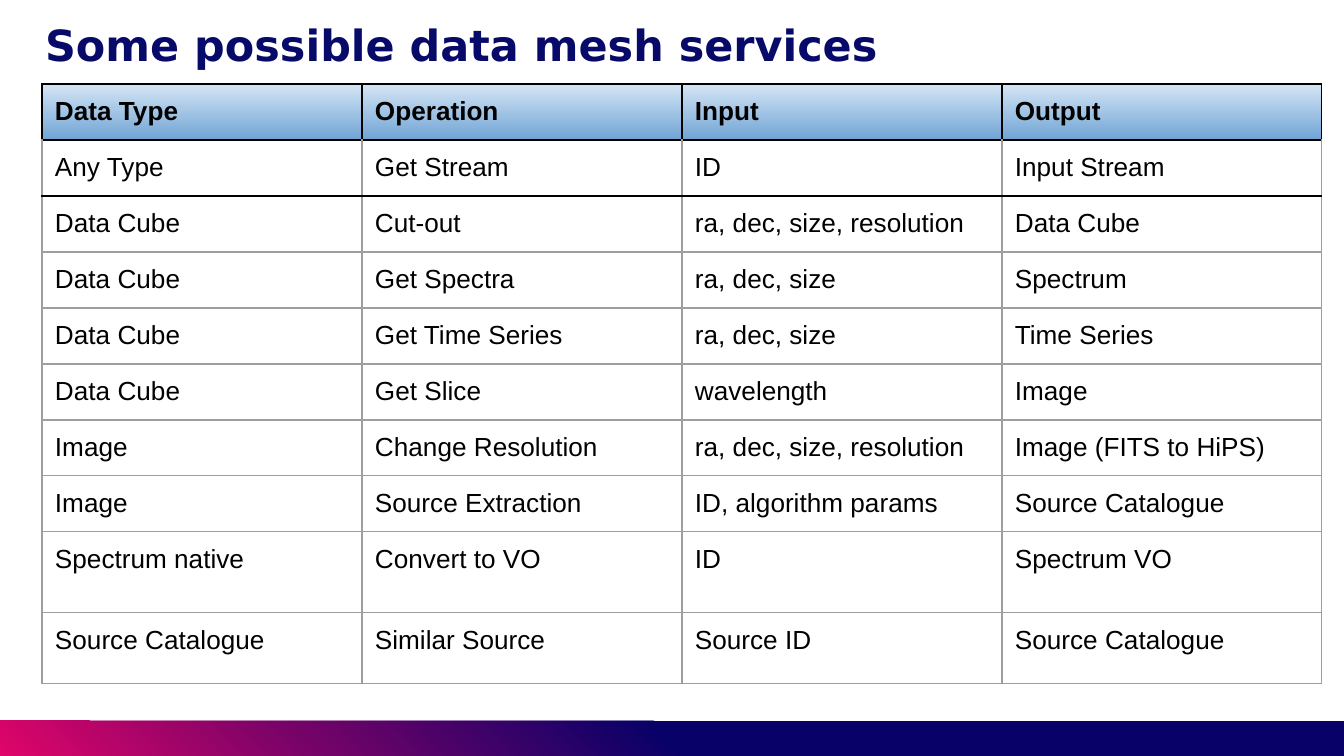
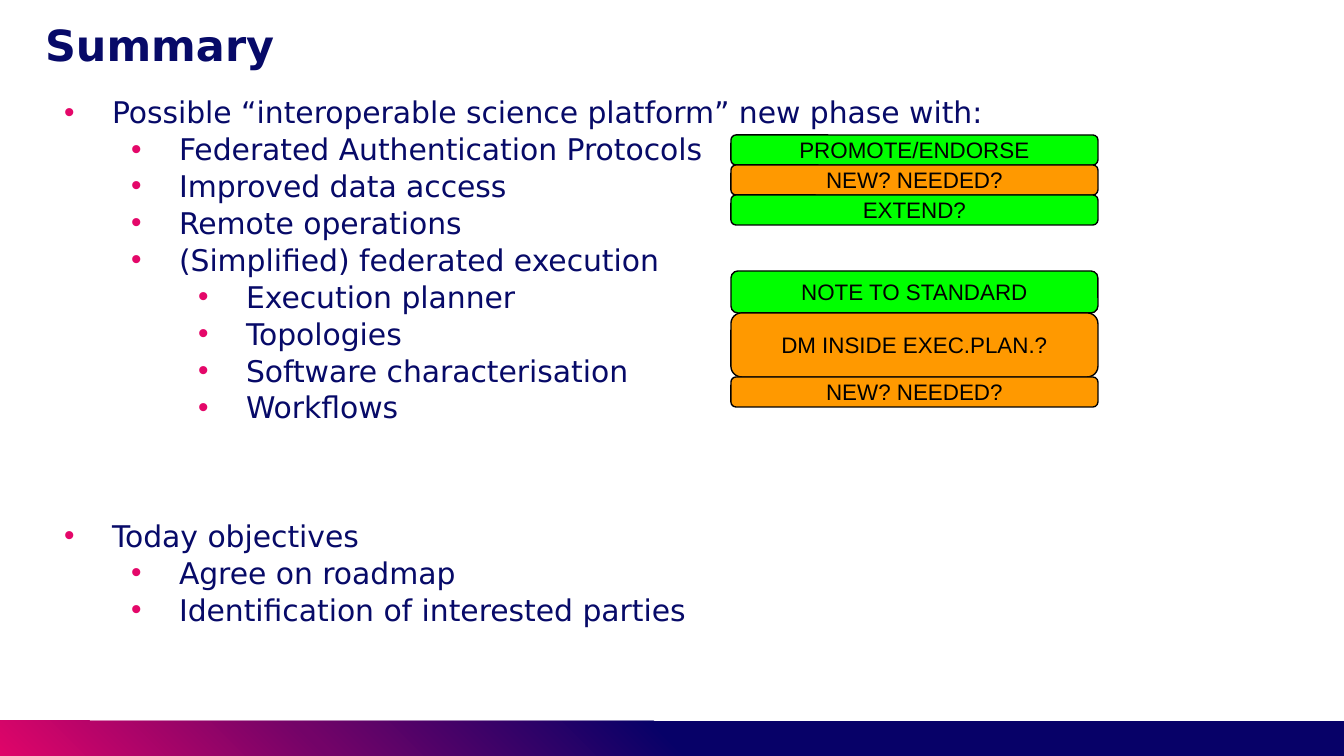
from dataclasses import dataclass

from lxml import etree
from pptx import Presentation
from pptx.dml.color import RGBColor
from pptx.enum.shapes import MSO_CONNECTOR, MSO_SHAPE
from pptx.enum.text import MSO_ANCHOR, MSO_AUTO_SIZE, PP_ALIGN
from pptx.oxml.ns import qn
from pptx.util import Pt

RECTANGLE = MSO_SHAPE.RECTANGLE
ROUNDED = MSO_SHAPE.ROUNDED_RECTANGLE
STRAIGHT = MSO_CONNECTOR.STRAIGHT
TOP, MIDDLE = MSO_ANCHOR.TOP, MSO_ANCHOR.MIDDLE
LEFT, CENTER = PP_ALIGN.LEFT, PP_ALIGN.CENTER
NO_AUTOFIT = MSO_AUTO_SIZE.NONE
TITLE_AND_CONTENT, TITLE_ONLY = 1, 5

SERVICES_TITLE = "Some possible data mesh services"
SERVICES = [
    ("Data Type", "Operation", "Input", "Output"),
    ("Any Type", "Get Stream", "ID", "Input Stream"),
    ("Data Cube", "Cut-out", "ra, dec, size, resolution", "Data Cube"),
    ("Data Cube", "Get Spectra", "ra, dec, size", "Spectrum"),
    ("Data Cube", "Get Time Series", "ra, dec, size", "Time Series"),
    ("Data Cube", "Get Slice", "wavelength", "Image"),
    ("Image", "Change Resolution", "ra, dec, size, resolution", "Image (FITS to HiPS)"),
    ("Image", "Source Extraction", "ID, algorithm params", "Source Catalogue"),
    ("Spectrum native", "Convert to VO", "ID", "Spectrum VO"),
    ("Source Catalogue", "Similar Source", "Source ID", "Source Catalogue"),
]
ROW_HEIGHTS = [56] * 8 + [81, 71]

SUMMARY_TITLE = "Summary"
SUMMARY = [
    (0, "Possible “interoperable science platform” new phase with:"),
    (1, "Federated Authentication Protocols"),
    (1, "Improved data access"),
    (1, "Remote operations"),
    (1, "(Simplified) federated execution"),
    (2, "Execution planner"),
    (2, "Topologies"),
    (2, "Software characterisation"),
    (2, "Workflows"),
    (0, "Today objectives"),
    (1, "Agree on roadmap"),
    (1, "Identification of interested parties"),
]
TAG_STACKS = [
    (135, [("PROMOTE/ENDORSE", "ready", 30),
           ("NEW? NEEDED?", "open", 30),
           ("EXTEND?", "ready", 30)]),
    (271, [("NOTE TO STANDARD", "ready", 42),
           ("DM INSIDE EXEC.PLAN.?", "open", 64),
           ("NEW? NEEDED?", "open", 30)]),
]


@dataclass(frozen=True)
class Theme:
    heading_font: str = "DejaVu Sans"
    label_font: str = "Arial"
    title_size: int = 23
    body_size: int = 16
    table_size: int = 14
    tag_size: int = 12
    thin: float = 0.75
    navy: str = "070A68"
    pink: str = "E40769"
    black: str = "000000"
    white: str = "FFFFFF"
    grid: str = "9E9E9E"
    ready: str = "00FF00"
    open: str = "FF9900"
    band: tuple = ((0, "070168"), (50, "070168"), (76, "730368"), (100, "DF0569"))
    header: tuple = ((0, "D4E5F5"), (100, "70A4D5"))


THEME = Theme()


def px(length):
    return round(length * 914400 / 134.4)


def rgb(value):
    return RGBColor.from_string(value)


def assign(target, **values):
    for name, value in values.items():
        setattr(target, name, value)


def place(shape, left, top, width, height):
    assign(shape, left=px(left), top=px(top), width=px(width), height=px(height))


def add_node(parent, tag, **attributes):
    node = etree.SubElement(parent, qn(tag))
    for name, value in attributes.items():
        node.set(name, str(value))
    return node


def add_color(parent, value):
    return add_node(add_node(parent, "a:solidFill"), "a:srgbClr", val=value)


def write(paragraph, text, font, size, color, bold=False):
    run = paragraph.add_run()
    run.text = text
    assign(run.font, name=font, size=Pt(size), bold=bold)
    run.font.color.rgb = rgb(color)


def set_frame(frame, margins, anchor):
    sides = ("margin_left", "margin_top", "margin_right", "margin_bottom")
    assign(frame, word_wrap=True, auto_size=NO_AUTOFIT, vertical_anchor=anchor,
           **dict(zip(sides, map(px, margins))))


def paint_gradient(fill, properties, stops, angle):
    fill.gradient()
    gradient = properties.find(qn("a:gradFill"))
    for child in list(gradient):
        gradient.remove(child)
    stop_list = add_node(gradient, "a:gsLst")
    for position, color in stops:
        stop = add_node(stop_list, "a:gs", pos=position * 1000)
        add_node(stop, "a:srgbClr", val=color)
    add_node(gradient, "a:lin", ang=angle * 60000, scaled=0)


def add_footer_band(presentation, slide):
    band = slide.shapes.add_shape(RECTANGLE, 0, px(721), px(1344), px(35))
    band.shadow.inherit = False
    band.line.fill.background()
    paint_gradient(band.fill, band.element.spPr, THEME.band, 135)

    rule = slide.shapes.add_connector(STRAIGHT, px(90), px(720), px(1344), px(720))
    rule.line.width = Pt(1)
    rule.line.color.rgb = rgb(THEME.white)
    color = rule.element.spPr.find(".//" + qn("a:srgbClr"))
    add_node(color, "a:alpha", val=50000)
    add_node(rule.element.spPr, "a:effectLst")

    for identifier, shape in enumerate((band, rule), start=50):
        shape.element[0][0].set("id", str(identifier))
        presentation.slide_master.shapes.element.append(shape.element)


def add_slide(presentation, layout, heading):
    slide = presentation.slides.add_slide(presentation.slide_layouts[layout])
    title = slide.shapes.title
    place(title, 42, 19, 1260, 105)
    set_frame(title.text_frame, (3, 0, 3, 3), TOP)
    paragraph = title.text_frame.paragraphs[0]
    paragraph.alignment = LEFT
    write(paragraph, heading, THEME.heading_font, THEME.title_size, THEME.navy, True)
    return slide


def set_borders(cell, row):
    side = THEME.black if row == 0 else THEME.grid
    top = THEME.black if row <= 2 else THEME.grid
    bottom = THEME.black if row <= 1 else THEME.grid
    properties = cell._tc.get_or_add_tcPr()
    edges = {"a:lnL": side, "a:lnR": side, "a:lnT": top, "a:lnB": bottom}
    for index, (tag, color) in enumerate(edges.items()):
        line = add_node(properties, tag, w=Pt(THEME.thin))
        add_color(line, color)
        properties.insert(index, line)


def fill_cell(cell, text, row):
    margin = px(13)
    assign(cell, margin_left=margin, margin_right=margin, margin_top=margin,
           margin_bottom=margin, vertical_anchor=TOP)
    is_header = row == 0
    write(cell.text_frame.paragraphs[0], text, THEME.label_font, THEME.table_size,
          THEME.black, is_header)
    if is_header:
        paint_gradient(cell.fill, cell._tc.get_or_add_tcPr(), THEME.header, 90)
    else:
        cell.fill.background()
    set_borders(cell, row)


def add_services_table(slide):
    columns, column_width = len(SERVICES[0]), 320
    frame = slide.shapes.add_table(len(SERVICES), columns, px(42), px(84),
                                   px(columns * column_width), px(sum(ROW_HEIGHTS)))
    table = frame.table
    assign(table, first_row=False, horz_banding=False)
    for column in table.columns:
        column.width = px(column_width)
    for row, (height, texts) in enumerate(zip(ROW_HEIGHTS, SERVICES)):
        table.rows[row].height = px(height)
        for column, text in enumerate(texts):
            fill_cell(table.cell(row, column), text, row)


def add_bullet(paragraph, level):
    properties = paragraph._p.get_or_add_pPr()
    properties.set("marL", str(px(67 * (level + 1))))
    properties.set("indent", str(px(-48)))
    add_node(add_node(properties, "a:buClr"), "a:srgbClr", val=THEME.pink)
    add_node(properties, "a:buFont", typeface=THEME.label_font)
    add_node(properties, "a:buChar", char="•")


def add_summary_list(slide):
    body = slide.placeholders[1]
    place(body, 42, 90, 1260, 598)
    frame = body.text_frame
    set_frame(frame, (3, 3, 3, 3), TOP)
    for index, (level, text) in enumerate(SUMMARY):
        paragraph = frame.add_paragraph() if index else frame.paragraphs[0]
        add_bullet(paragraph, level)
        starts_section = index > 0 and level == 0
        assign(paragraph, level=level, alignment=LEFT, line_spacing=1.03,
               space_before=Pt(49 if starts_section else 0), space_after=Pt(0))
        write(paragraph, text, THEME.heading_font, THEME.body_size, THEME.navy)


def add_tag(slide, text, status, top, height):
    tag = slide.shapes.add_shape(ROUNDED, px(731), px(top), px(367), px(height))
    tag.shadow.inherit = False
    tag.fill.solid()
    tag.fill.fore_color.rgb = rgb(getattr(THEME, status))
    tag.line.color.rgb = rgb(THEME.black)
    tag.line.width = Pt(THEME.thin)
    set_frame(tag.text_frame, (13, 13, 13, 13), MIDDLE)
    paragraph = tag.text_frame.paragraphs[0]
    paragraph.alignment = CENTER
    write(paragraph, text, THEME.label_font, THEME.tag_size, THEME.black)


def add_tags(slide):
    for top, tags in TAG_STACKS:
        for text, status, height in tags:
            add_tag(slide, text, status, top, height)
            top += height


def main():
    presentation = Presentation()
    assign(presentation, slide_width=px(1344), slide_height=px(756))

    services = add_slide(presentation, TITLE_ONLY, SERVICES_TITLE)
    add_footer_band(presentation, services)
    add_services_table(services)

    summary = add_slide(presentation, TITLE_AND_CONTENT, SUMMARY_TITLE)
    add_summary_list(summary)
    add_tags(summary)

    presentation.save("out.pptx")


if __name__ == "__main__":
    main()
